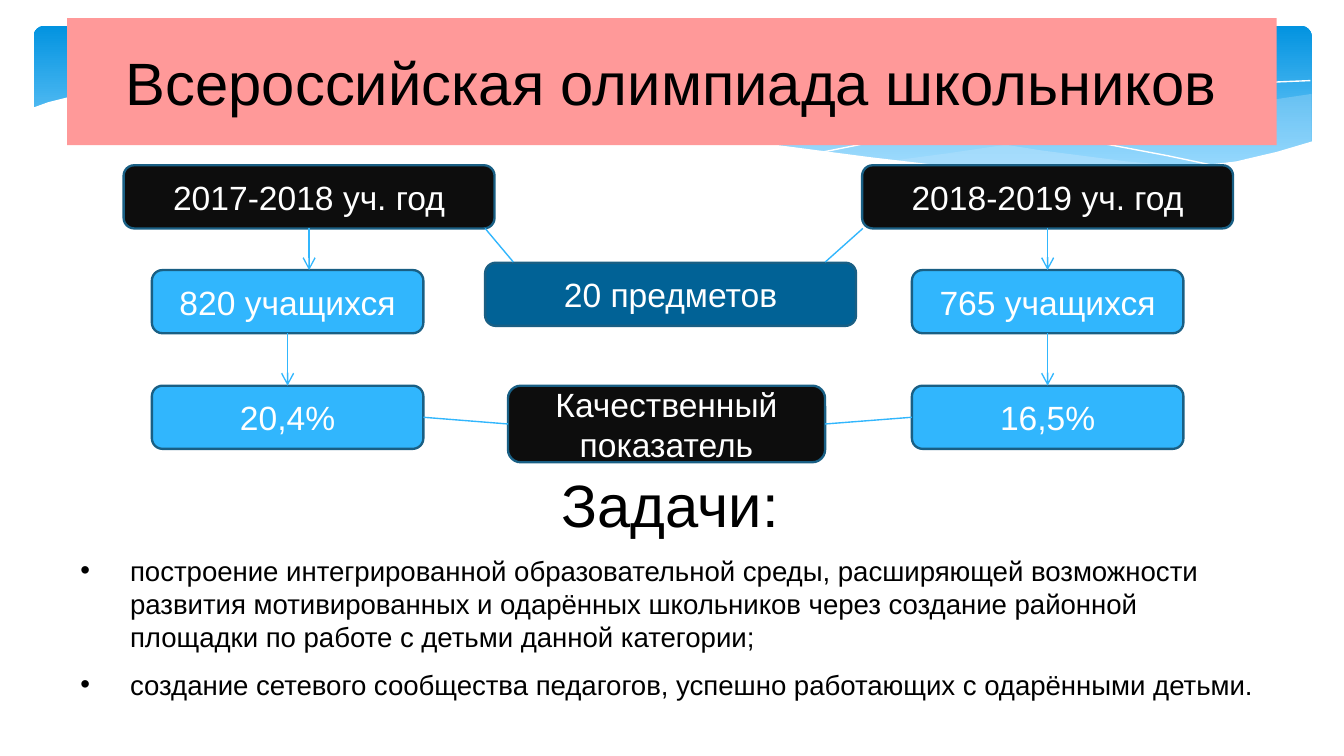
from collections import namedtuple

from lxml.etree import SubElement
from pptx import Presentation
from pptx.dml.color import RGBColor
from pptx.enum.shapes import MSO_CONNECTOR, MSO_SHAPE
from pptx.enum.text import MSO_ANCHOR, PP_ALIGN
from pptx.oxml.ns import qn
from pptx.util import Inches, Pt

CELL = Inches(0.01)
COLUMNS, ROWS = 1000, 562.5
Box = namedtuple("Box", "left top width height")
COLORS = {
    "white": "FFFFFF", "black": "000000", "title": "FF9999", "year": "0D0D0D",
    "subjects": "016296", "count": "31B6FD", "outline": "195F84",
    "sky_top": "0293E0", "sky_bottom": "83D3FE", "wave": "C6E7FC",
}
TEXT_FORMATS = {
    "heading": {"name": "Arial", "size": Pt(32)},
    "node": {"name": "Arial", "size": Pt(18)},
    "task": {"name": "Arial", "size": Pt(14.8)},
}
TASKS = [
    "построение интегрированной образовательной среды, расширяющей возможности развития "
    "мотивированных и одарённых школьников через создание районной площадки по работе с "
    "детьми данной категории;",
    "создание сетевого сообщества педагогов, успешно работающих с одарёнными детьми.",
]
RIGHT_WAVE = [
    (975, 70), (935, 76), (891, 83), (861, 88), (805, 98), (753, 107), (706, 114), (661, 120),
    (691, 123), (719, 125), (757, 128), (792, 129), (835, 129), (872, 126), (905, 122),
    (935, 117), (963, 110), (976, 106), (976, 70),
]
BROAD_WAVE = [
    (893, 125), (837, 120), (775, 112), (706, 101), (629, 87), (584, 79), (541, 73), (502, 68),
    (465, 64), (420, 61), (380, 60), (344, 60), (313, 62), (286, 64), (323, 68), (362, 73),
    (404, 79), (449, 87), (530, 101), (601, 112), (665, 121), (722, 126), (773, 129),
    (818, 130), (857, 128), (893, 125),
]
LONG_CURVE = [
    (309, 67), (328, 65), (353, 63), (387, 61), (433, 61), (469, 62), (510, 65), (556, 68),
    (608, 74), (665, 81), (727, 90), (795, 102), (869, 116), (907, 124),
]
RISING_CURVE = [
    (613, 113), (653, 105), (695, 97), (748, 88), (806, 78), (866, 70), (910, 65), (951, 61),
    (975, 60),
]
WHITE_WAVE = [
    (977, 105), (950, 113), (920, 120), (887, 124), (850, 127), (809, 128), (761, 128),
    (708, 124), (648, 117), (579, 108), (529, 100), (475, 91), (418, 81), (365, 72), (316, 66),
    (271, 62), (230, 59), (193, 59), (146, 59), (106, 63), (76, 67), (52, 72), (36, 76),
    (25, 80), (23, 81), (23, 168), (977, 168),
]


def rgb(name):
    """Return the named colour."""
    return RGBColor.from_string(COLORS[name])


def emu(*cells):
    """Convert grid cells to slide lengths."""
    return [round(cell * CELL) for cell in cells]


def inside(box, left, top, width, height):
    """Return a box offset from the corner of another one."""
    return Box(box.left + left, box.top + top, width, height)


def paint(shape, fill=None, line=None, line_width=1.25):
    """Set the fill and outline and drop the shadow."""
    shape.shadow.inherit = False
    for part, color in ((shape.fill, fill), (shape.line.fill, line)):
        if color:
            part.solid()
            part.fore_color.rgb = rgb(color)
        else:
            part.background()
    if line:
        shape.line.width = Pt(line_width)


def write(paragraph, text, style, color):
    """Fill a paragraph with one formatted run."""
    run = paragraph.add_run()
    run.text = text
    for name, value in TEXT_FORMATS[style].items():
        setattr(run.font, name, value)
    run.font.color.rgb = rgb(color)


def panel(slide, box, text, fill, kind=MSO_SHAPE.FLOWCHART_ALTERNATE_PROCESS,
          line="outline", style="node", color="white"):
    """Add a filled shape with centred text."""
    shape = slide.shapes.add_shape(kind, *emu(*box))
    paint(shape, fill, line)
    frame = shape.text_frame
    frame.word_wrap = True
    frame.vertical_anchor = MSO_ANCHOR.MIDDLE
    frame.paragraphs[0].alignment = PP_ALIGN.CENTER
    write(frame.paragraphs[0], text, style, color)
    return shape


def link(slide, start, end, source=None, target=None, arrow=False):
    """Draw a line, joined to the given (shape, side) pairs."""
    line = slide.shapes.add_connector(MSO_CONNECTOR.STRAIGHT, *emu(*start, *end))
    if source:
        line.begin_connect(*source)
    if target:
        line.end_connect(*target)
    line.line.color.rgb = rgb("count")
    line.line.width = Pt(0.75)
    properties = line._element.spPr
    if arrow:
        SubElement(properties.find(qn("a:ln")), qn("a:tailEnd"), type="arrow")
    SubElement(properties, qn("a:effectLst"))


def wave(slide, box, points, fill=None, opacity=100, line=None):
    """Add a wave outline; one without fill stays open."""
    builder = slide.shapes.build_freeform(*points[0], scale=CELL)
    builder.add_line_segments(points[1:], close=bool(fill))
    shape = builder.convert_to_shape(*emu(box.left, box.top))
    paint(shape, fill, line, 0)
    if opacity < 100:
        color = shape._element.spPr.find(qn("a:solidFill"))[0]
        SubElement(color, qn("a:alpha"), val=str(opacity * 1000))


def header(slide, box):
    """Place the sky band, its waves and the title."""
    sky = slide.shapes.add_shape(MSO_SHAPE.ROUNDED_RECTANGLE, *emu(*inside(box, 25, 19, 951, 117)))
    sky.adjustments[0] = 0.07
    paint(sky)
    sky.fill.gradient()
    sky.fill.gradient_angle = 270
    for stop, color, position in zip(sky.fill.gradient_stops, ("sky_top", "sky_bottom"), (0, 0.9)):
        stop.color.rgb = rgb(color)
        stop.position = position
    wave(slide, box, RIGHT_WAVE, "wave", 29)
    wave(slide, box, BROAD_WAVE, "wave", 40)
    wave(slide, box, LONG_CURVE, line="white")
    wave(slide, box, RISING_CURVE, line="white")
    wave(slide, box, WHITE_WAVE, "white")
    panel(slide, inside(box, 50, 13.5, 900, 94.5), "Всероссийская олимпиада школьников", "title",
          MSO_SHAPE.RECTANGLE, None, "heading", "black")


def year_column(slide, box, indent, year, pupils, quality):
    """Place a school year above its pupils and result; return the result."""
    year_node = panel(slide, inside(box, 0, 0, box.width, 47), year, "year")
    pupil_node, quality_node = [
        panel(slide, inside(box, indent, top, 202, 47), text, "count")
        for top, text in ((78, pupils), (164, quality))
    ]
    middle = box.left + box.width / 2
    centred = indent * 2 + 202 == box.width
    link(slide, (middle, box.top + 47), (middle, box.top + 78), (year_node, 2),
         (pupil_node, 0) if centred else None, arrow=True)
    center = box.left + indent + 101
    link(slide, (center, box.top + 125), (center, box.top + 164), (pupil_node, 2),
         (quality_node, 0), arrow=True)
    return quality_node


def comparison(slide, box):
    """Place both year columns and the shared nodes between them."""
    earlier = year_column(slide, inside(box, 0, 0, 276, box.height), 21,
                          "2017-2018 уч. год", "820 учащихся", "20,4%")
    later = year_column(slide, inside(box, 549.5, 0, 276, box.height), 37,
                        "2018-2019 уч. год", "765 учащихся", "16,5%")
    panel(slide, inside(box, 269, 72.5, 276, 47), "20 предметов", "subjects")
    for upper, lower in ((269, 290), (550, 522)):
        link(slide, (box.left + upper, box.top + 47), (box.left + lower, box.top + 72))
    indicator = panel(slide, inside(box, 286, 164, 236, 57), "Качественный показатель", "year")
    link(slide, (0, 0), (0, 0), (earlier, 3), (indicator, 1))
    link(slide, (0, 0), (0, 0), (indicator, 3), (later, 1))


def tasks(slide, box):
    """Place the tasks heading and its bulleted list."""
    heading = slide.shapes.add_textbox(*emu(*inside(box, 358, 0, 183, 64))).text_frame
    heading.word_wrap = False
    write(heading.paragraphs[0], "Задачи:", "heading", "black")
    frame = slide.shapes.add_textbox(*emu(*inside(box, 0, 64, box.width, 135))).text_frame
    frame.word_wrap = True
    for index, task in enumerate(TASKS):
        paragraph = frame.add_paragraph() if index else frame.paragraphs[0]
        paragraph.space_before = Pt(8)
        write(paragraph, task, "task", "black")
        properties = paragraph._p.get_or_add_pPr()
        properties.set("marL", str(Inches(0.37)))
        properties.set("indent", str(-Inches(0.37)))
        SubElement(SubElement(properties, qn("a:buClr")), qn("a:srgbClr"), val=COLORS["black"])
        SubElement(properties, qn("a:buFont"), typeface="Arial")
        SubElement(properties, qn("a:buChar"), char="•")


def main():
    """Build and save the slide."""
    deck = Presentation()
    deck.slide_width, deck.slide_height = emu(COLUMNS, ROWS)
    slide = deck.slides.add_slide(deck.slide_layouts[6])
    header(slide, Box(0, 0, COLUMNS, 168))
    comparison(slide, Box(92, 123, 826, 221))
    tasks(slide, Box(50, 343, 900, 199))
    deck.save("out.pptx")


if __name__ == "__main__":
    main()
